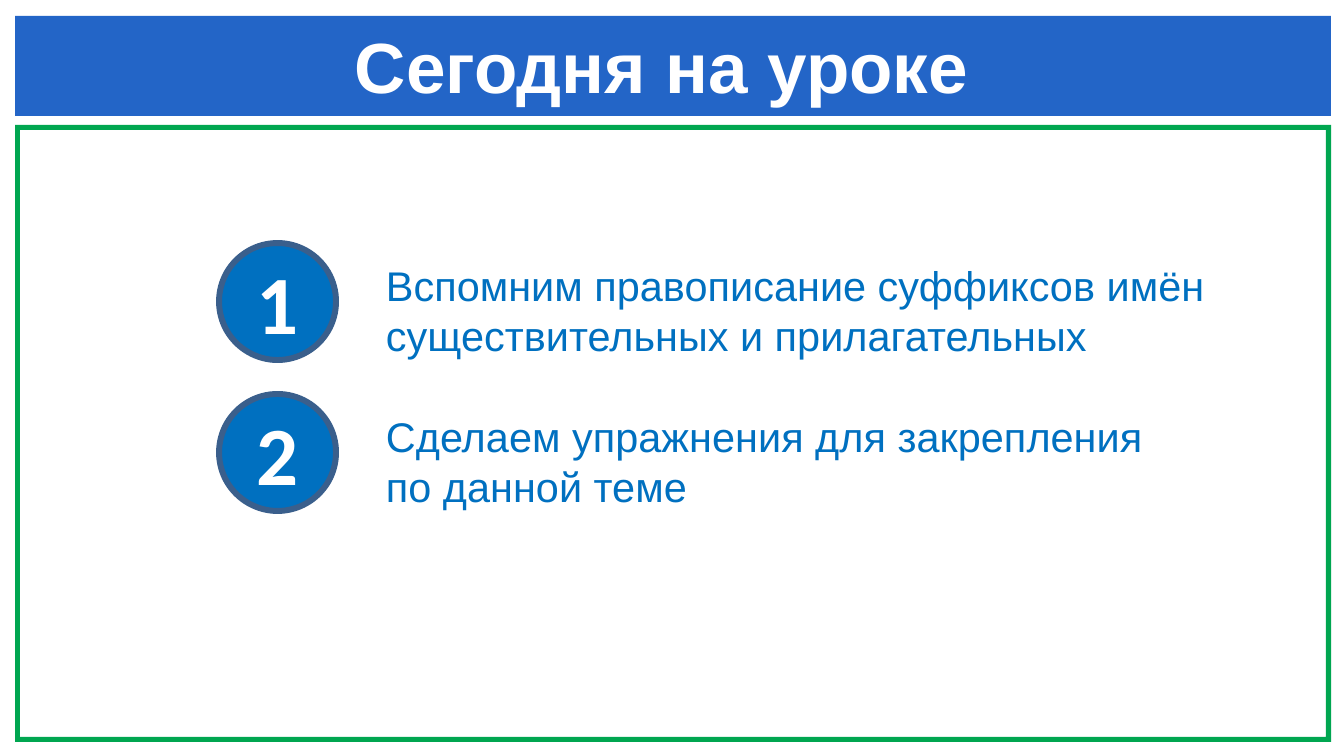
import pptx
import pptx.util
import pptx.dml.color
import pptx.enum.shapes
import pptx.enum.text

RGBColor = pptx.dml.color.RGBColor
WHITE = RGBColor(0xFF, 0xFF, 0xFF)
BANNER_BLUE = RGBColor(0x23, 0x65, 0xC7)
FRAME_GREEN = RGBColor(0x00, 0xA6, 0x50)
GOAL_BLUE = RGBColor(0x00, 0x70, 0xC0)
RING_BLUE = RGBColor(0x3A, 0x5F, 0x8C)

SHAPES = pptx.enum.shapes.MSO_SHAPE
ALIGN = pptx.enum.text.PP_ALIGN
ANCHOR = pptx.enum.text.MSO_ANCHOR

PIXELS_PER_INCH = 213
SLIDE_SIZE = (1344, 756)
BANNER_BOX = (15, 16, 1316, 100)
FRAME_BOX = (15, 125, 1316, 617)
FRAME_THICKNESS = 5
GOALS_BOX = (219, 243, 990, 268)
GOAL_PITCH = 151
CIRCLE_SIZE = 117

TITLE = "Сегодня на уроке"
GOALS = [
    ("Вспомним правописание суффиксов имён существительных и прилагательных", 823),
    ("Сделаем упражнения для закрепления по данной теме", 771),
]

TITLE_FORMAT = {"name": "Arial", "size": pptx.util.Pt(24), "bold": True}
NUMBER_FORMAT = {"name": "Calibri", "size": pptx.util.Pt(28), "bold": True}
GOAL_FORMAT = {"name": "Arial", "size": pptx.util.Pt(14), "bold": False}


def px(length):
    return pptx.util.Emu(round(length * 914400 / PIXELS_PER_INCH))


def add_filled_shape(slide, kind, box, color):
    shape = slide.shapes.add_shape(kind, *map(px, box))
    shape.shadow.inherit = False
    shape.fill.solid()
    shape.fill.fore_color.rgb = color
    shape.line.fill.background()
    return shape


def write_text(shape, text, font_format, color, alignment, anchor, right_inset=0):
    frame = shape.text_frame
    frame_format = {
        "word_wrap": True,
        "vertical_anchor": anchor,
        "margin_left": 0,
        "margin_top": 0,
        "margin_right": px(right_inset),
        "margin_bottom": 0,
    }
    for name, value in frame_format.items():
        setattr(frame, name, value)
    paragraph = frame.paragraphs[0]
    paragraph.alignment = alignment
    run = paragraph.add_run()
    run.text = text
    for name, value in font_format.items():
        setattr(run.font, name, value)
    run.font.color.rgb = color


def add_banner(slide, box):
    left, top, width, height = box
    add_filled_shape(slide, SHAPES.RECTANGLE, box, BANNER_BLUE)
    title_box = (left + 55, top + 7, width - 113, height - 15)
    title = slide.shapes.add_textbox(*map(px, title_box))
    write_text(title, TITLE, TITLE_FORMAT, WHITE, ALIGN.CENTER, ANCHOR.TOP, 20)


def add_frame(slide, box):
    frame = add_filled_shape(slide, SHAPES.FRAME, box, FRAME_GREEN)
    frame.adjustments[0] = FRAME_THICKNESS / min(box[2:])


def add_goals(slide, box):
    left, top, width, height = box
    for index, (goal, text_width) in enumerate(GOALS):
        row_top = top + index * GOAL_PITCH
        circle_box = (left, row_top, CIRCLE_SIZE, CIRCLE_SIZE)
        circle = add_filled_shape(slide, SHAPES.OVAL, circle_box, GOAL_BLUE)
        circle.line.color.rgb = RING_BLUE
        circle.line.width = pptx.util.Pt(2)
        write_text(circle, str(index + 1), NUMBER_FORMAT, WHITE,
                   ALIGN.CENTER, ANCHOR.MIDDLE)
        text_box = (left + 167, row_top + 17, text_width, 100)
        label = slide.shapes.add_textbox(*map(px, text_box))
        write_text(label, goal, GOAL_FORMAT, GOAL_BLUE, ALIGN.LEFT, ANCHOR.TOP)


def main():
    presentation = pptx.Presentation()
    presentation.slide_width, presentation.slide_height = map(px, SLIDE_SIZE)
    slide = presentation.slides.add_slide(presentation.slide_layouts[6])
    add_frame(slide, FRAME_BOX)
    add_banner(slide, BANNER_BOX)
    add_goals(slide, GOALS_BOX)
    presentation.save("out.pptx")


if __name__ == "__main__":
    main()
